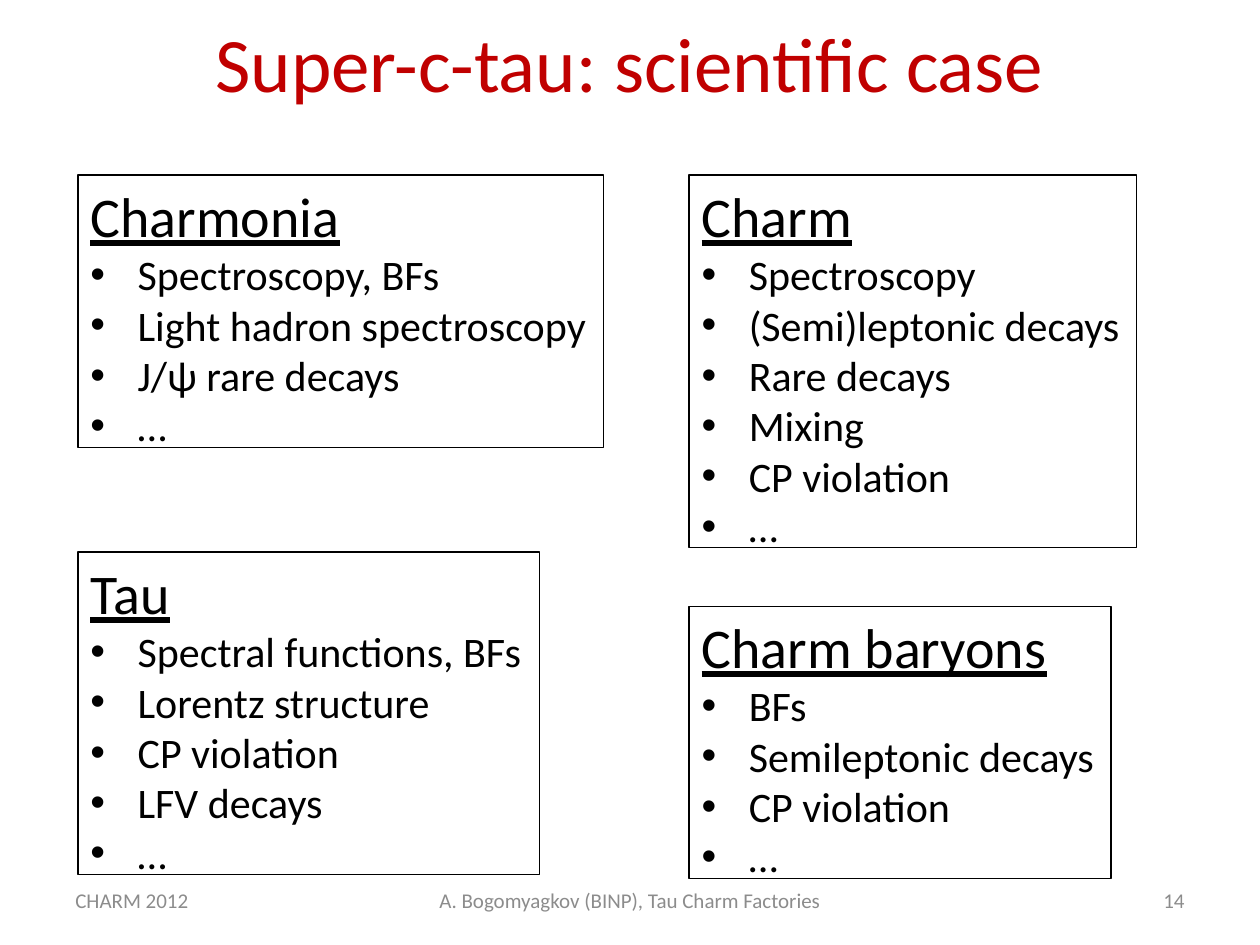
from dataclasses import dataclass

from lxml.etree import SubElement
from pptx import Presentation
from pptx.dml.color import RGBColor
from pptx.enum.text import MSO_ANCHOR as Anchor, MSO_AUTO_SIZE as AutoSize, PP_ALIGN as Align
from pptx.oxml.ns import qn
from pptx.util import Cm, Pt

RED = RGBColor(0xC0, 0x00, 0x00)
BLACK = RGBColor(0x00, 0x00, 0x00)
GRAY = RGBColor(0x8C, 0x8C, 0x8C)
FONT = "Calibri"
LEFT_COLUMN, RIGHT_COLUMN = 1.57, 13.89
TOP_ROW = 3.53
HEADING_HEIGHT, ITEM_HEIGHT = 1.7, 1.01
BULLET_INDENT = Cm(0.95)


@dataclass(frozen=True)
class Topic:
    heading: str
    items: tuple[str, ...]
    left: float
    top: float
    width: float

    @property
    def height(self) -> float:
        return HEADING_HEIGHT + ITEM_HEIGHT * len(self.items)


@dataclass(frozen=True)
class FooterPart:
    text: str
    left: float
    width: float
    align: Align


TOPICS = (
    Topic("Charmonia",
          ("Spectroscopy, BFs", "Light hadron spectroscopy", "J/ψ rare decays", "…"),
          LEFT_COLUMN, TOP_ROW, 10.59),
    Topic("Charm",
          ("Spectroscopy", "(Semi)leptonic decays", "Rare decays", "Mixing", "CP violation", "…"),
          RIGHT_COLUMN, TOP_ROW, 9.02),
    Topic("Tau",
          ("Spectral functions, BFs", "Lorentz structure", "CP violation", "LFV decays", "…"),
          LEFT_COLUMN, 11.13, 9.3),
    Topic("Charm baryons",
          ("BFs", "Semileptonic decays", "CP violation", "…"),
          RIGHT_COLUMN, 12.22, 8.51),
)

FOOTER = (
    FooterPart("CHARM 2012", 1.27, 5.92, Align.LEFT),
    FooterPart("A. Bogomyagkov (BINP), Tau Charm Factories", 8, 9.4, Align.CENTER),
    FooterPart("14", 18.21, 5.92, Align.RIGHT),
)


def place(shape, left: float, top: float, width: float, height: float) -> None:
    shape.left, shape.top = Cm(left), Cm(top)
    shape.width, shape.height = Cm(width), Cm(height)


def write(paragraph, text: str, *, size: int, color: RGBColor = BLACK,
          align: Align = Align.LEFT, underline: bool = False) -> None:
    paragraph.alignment = align
    paragraph.space_before = Pt(0)
    run = paragraph.add_run()
    run.text = text
    font = run.font
    font.name, font.size = FONT, Pt(size)
    font.bold, font.underline = False, underline
    font.color.rgb = color


def set_bullet(paragraph, bulleted: bool) -> None:
    properties = paragraph._p.get_or_add_pPr()
    indent = BULLET_INDENT if bulleted else 0
    properties.set("marL", str(indent))
    properties.set("indent", str(-indent))
    if bulleted:
        SubElement(properties, qn("a:buFont")).set("typeface", "Arial")
        SubElement(properties, qn("a:buChar")).set("char", "•")
    else:
        SubElement(properties, qn("a:buNone"))


def draw_topic(shape, topic: Topic) -> None:
    place(shape, topic.left, topic.top, topic.width, topic.height)
    shape.line.color.rgb = BLACK
    shape.line.width = Pt(0.75)
    frame = shape.text_frame
    frame.word_wrap = False
    frame.auto_size = AutoSize.SHAPE_TO_FIT_TEXT
    frame.vertical_anchor = Anchor.TOP
    heading = frame.paragraphs[0]
    write(heading, topic.heading, size=32, underline=True)
    set_bullet(heading, False)
    for item in topic.items:
        paragraph = frame.add_paragraph()
        write(paragraph, item, size=24)
        set_bullet(paragraph, True)


def draw_footer_part(slide, part: FooterPart) -> None:
    box = slide.shapes.add_textbox(Cm(part.left), Cm(17.65), Cm(part.width), Cm(1.01))
    frame = box.text_frame
    frame.word_wrap = True
    frame.vertical_anchor = Anchor.MIDDLE
    write(frame.paragraphs[0], part.text, size=12, color=GRAY, align=part.align)


def main() -> None:
    presentation = Presentation()
    presentation.slide_width, presentation.slide_height = Cm(25.4), Cm(19.05)
    comparison_layout = presentation.slide_layouts[4]
    slide = presentation.slides.add_slide(comparison_layout)
    title, *bodies = slide.placeholders

    place(title, 1.27, 0, 22.86, 2.49)
    title.text_frame.vertical_anchor = Anchor.MIDDLE
    write(title.text_frame.paragraphs[0], "Super-c-tau: scientific case",
          size=44, color=RED, align=Align.CENTER)

    for part in FOOTER:
        draw_footer_part(slide, part)
    for body, topic in zip(bodies, TOPICS):
        draw_topic(body, topic)

    presentation.save("out.pptx")


if __name__ == "__main__":
    main()
